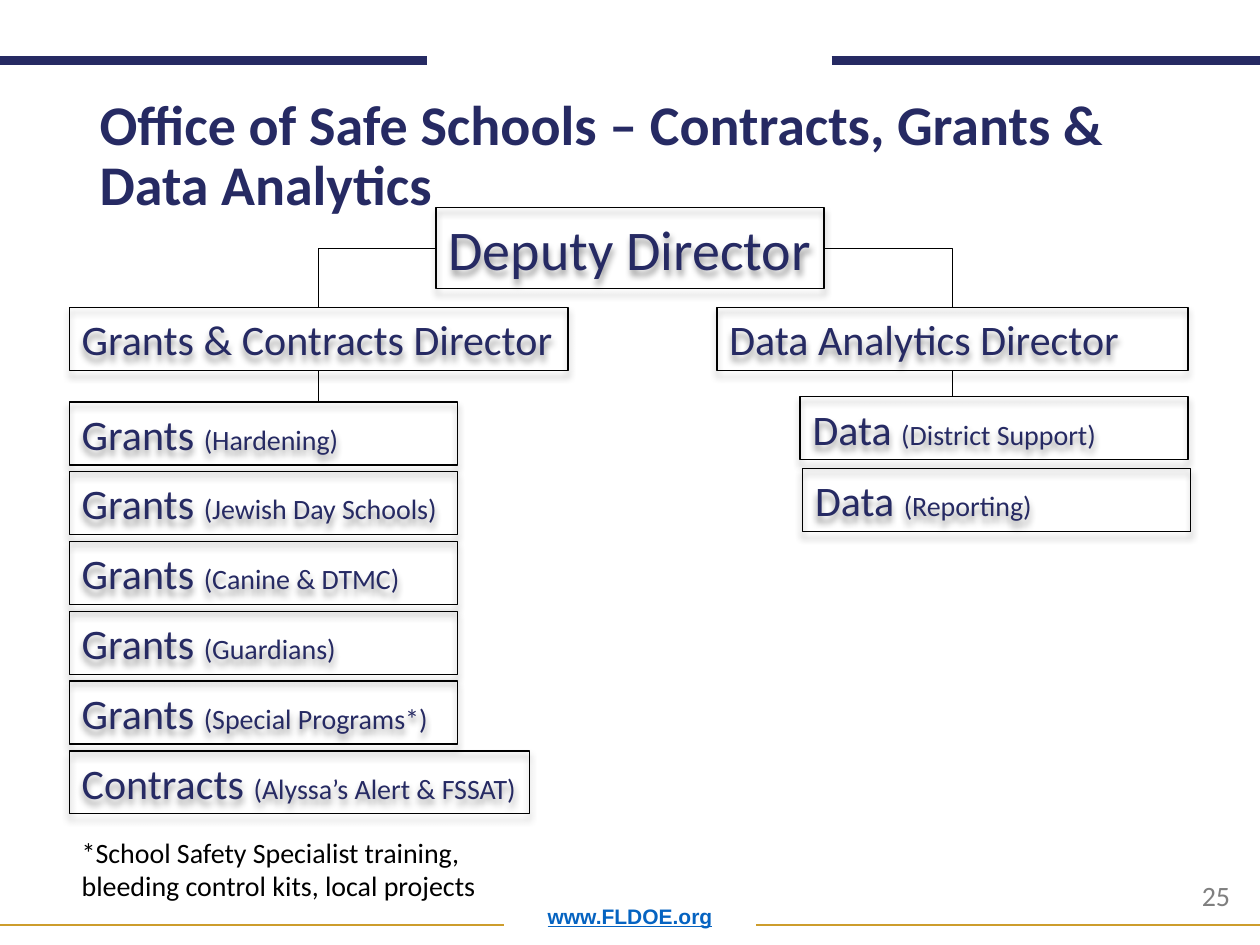
import lxml.etree
import pptx
import pptx.dml.color
import pptx.enum.shapes
import pptx.enum.text
import pptx.oxml.ns
import pptx.util

Inches = pptx.util.Inches
Pt = pptx.util.Pt
qn = pptx.oxml.ns.qn
Align = pptx.enum.text.PP_ALIGN
Anchor = pptx.enum.text.MSO_ANCHOR
Connector = pptx.enum.shapes.MSO_CONNECTOR

NAVY = "262A63"
GOLD = "CD9D2C"
BLACK = "000000"
GRAY = "7F7F7F"
LINK_BLUE = "0563C1"

TOP, LEFT, BOTTOM, RIGHT = range(4)


def rgb(value):
    return pptx.dml.color.RGBColor.from_string(value)


class OrgChartSlide:
    font_name = "Calibri"

    def __init__(self, slide):
        self.slide = slide

    def format_run(self, run, size, color, bold=False, font_name=None):
        run.font.name = font_name or self.font_name
        run.font.size = Pt(size)
        run.font.bold = bold
        run.font.color.rgb = rgb(color)

    def title(self, text, left, top, width, height):
        shape = self.slide.shapes.title
        shape.left, shape.top = Inches(left), Inches(top)
        shape.width, shape.height = Inches(width), Inches(height)
        text_frame = shape.text_frame
        text_frame.text = text
        text_frame.auto_size = pptx.enum.text.MSO_AUTO_SIZE.NONE
        text_frame.vertical_anchor = Anchor.BOTTOM
        paragraph = text_frame.paragraphs[0]
        paragraph.alignment = Align.LEFT
        paragraph.line_spacing = 0.9
        self.format_run(paragraph.runs[0], 32, NAVY, bold=True)

    def text(self, text, left, top, width, height, size, color, **style):
        shape = self.slide.shapes.add_textbox(
            Inches(left), Inches(top), Inches(width), Inches(height))
        shape.text_frame.word_wrap = True
        shape.text_frame.text = text
        self.format_run(shape.text_frame.paragraphs[0].runs[0], size, color, **style)
        return shape

    def box(self, text, left, top, width, height=0.5, size=24, detail=None):
        shape = self.slide.shapes.add_shape(
            pptx.enum.shapes.MSO_SHAPE.RECTANGLE,
            Inches(left), Inches(top), Inches(width), Inches(height))
        shape.fill.background()
        shape.line.color.rgb = rgb(BLACK)
        shape.line.width = Pt(0.75)
        self.shadow(shape)
        text_frame = shape.text_frame
        text_frame.word_wrap = True
        text_frame.vertical_anchor = Anchor.TOP
        paragraph = text_frame.paragraphs[0]
        paragraph.alignment = Align.LEFT
        paragraph.text = f"{text} " if detail else text
        self.format_run(paragraph.runs[0], size, NAVY)
        if detail:
            run = paragraph.add_run()
            run.text = f"({detail})"
            self.format_run(run, 16, NAVY)
        return shape

    def shadow(self, shape):
        shape.shadow.inherit = False
        effects = shape._element.spPr.find(qn("a:effectLst"))
        outer = lxml.etree.SubElement(
            effects, qn("a:outerShdw"), blurRad=str(Pt(4)), dist=str(Pt(3)),
            dir="5400000", algn="t", rotWithShape="0")
        color = lxml.etree.SubElement(outer, qn("a:srgbClr"), val=BLACK)
        lxml.etree.SubElement(color, qn("a:alpha"), val="40000")

    def line(self, start, end, color=BLACK, width=0.5, kind=Connector.STRAIGHT):
        connector = self.slide.shapes.add_connector(kind, *start, *end)
        connector.line.color.rgb = rgb(color)
        connector.line.width = Pt(width)
        lxml.etree.SubElement(connector._element.spPr, qn("a:effectLst"))
        return connector

    def rule(self, left, right, y, color, width):
        self.line((Inches(left), Inches(y)), (Inches(right), Inches(y)), color, width)

    def elbow(self, parent, side, child):
        start_x = parent.left if side == LEFT else parent.left + parent.width
        start = start_x, parent.top + parent.height // 2
        end = child.left + child.width // 2, child.top
        connector = self.line(start, end, kind=Connector.ELBOW)
        connector._element.spPr.find(qn("a:prstGeom")).set("prst", "bentConnector2")
        connector.begin_connect(parent, side)
        connector.end_connect(child, TOP)

    def drop(self, parent, child):
        x = parent.left + parent.width // 2
        connector = self.line((x, parent.top + parent.height), (x, child.top))
        connector.begin_connect(parent, BOTTOM)


def main():
    presentation = pptx.Presentation()
    presentation.slide_width = Inches(10)
    presentation.slide_height = Inches(7.5)
    slide = presentation.slides.add_slide(presentation.slide_layouts[5])
    chart = OrgChartSlide(slide)

    website = chart.text("www.FLDOE.org", 0.69, 7, 8.62, 0.42, 12, LINK_BLUE,
                         bold=True, font_name="Arial")
    website.text_frame.vertical_anchor = Anchor.BOTTOM
    paragraph = website.text_frame.paragraphs[0]
    paragraph.alignment = Align.CENTER
    paragraph.line_spacing = 0.9
    paragraph.runs[0].font.underline = True

    for left, right, y, color, width in [
        (0, 3.39, 0.48, NAVY, 5),
        (6.6, 10, 0.48, NAVY, 5),
        (0, 4, 7.34, GOLD, 1),
        (6, 10, 7.34, GOLD, 1),
    ]:
        chart.rule(left, right, y, color, width)
    chart.text("25", 9.44, 6.92, 0.52, 0.37, 16, GRAY)

    chart.title("Office of Safe Schools – Contracts, Grants & Data Analytics",
                0.69, 1.21, 8.76, 0.57)

    deputy = chart.box("Deputy Director", 3.46, 1.65, 3.08, 0.64, size=32)
    grants_director = chart.box("Grants & Contracts Director", 0.55, 2.44, 3.96)
    data_director = chart.box("Data Analytics Director", 5.69, 2.44, 3.74)

    grants_team = [
        ("Grants", "Hardening", 3.08),
        ("Grants", "Jewish Day Schools", 3.08),
        ("Grants", "Canine & DTMC", 3.08),
        ("Grants", "Guardians", 3.08),
        ("Grants", "Special Programs*", 3.08),
        ("Contracts", "Alyssa’s Alert & FSSAT", 3.65),
    ]
    first_top, last_top = 3.19, 5.96
    pitch = (last_top - first_top) / (len(grants_team) - 1)
    grants_boxes = [
        chart.box(name, 0.55, first_top + row * pitch, width, detail=detail)
        for row, (name, detail, width) in enumerate(grants_team)
    ]
    district_support = chart.box("Data", 6.35, 3.15, 3.08, detail="District Support")
    chart.box("Data", 6.37, 3.72, 3.08, detail="Reporting")

    chart.elbow(deputy, LEFT, grants_director)
    chart.elbow(deputy, RIGHT, data_director)
    chart.drop(grants_director, grants_boxes[0])
    chart.drop(data_director, district_support)

    chart.text("*School Safety Specialist training, bleeding control kits, local projects",
               0.55, 6.58, 3.41, 0.64, 16, BLACK)

    presentation.save("out.pptx")


if __name__ == "__main__":
    main()
